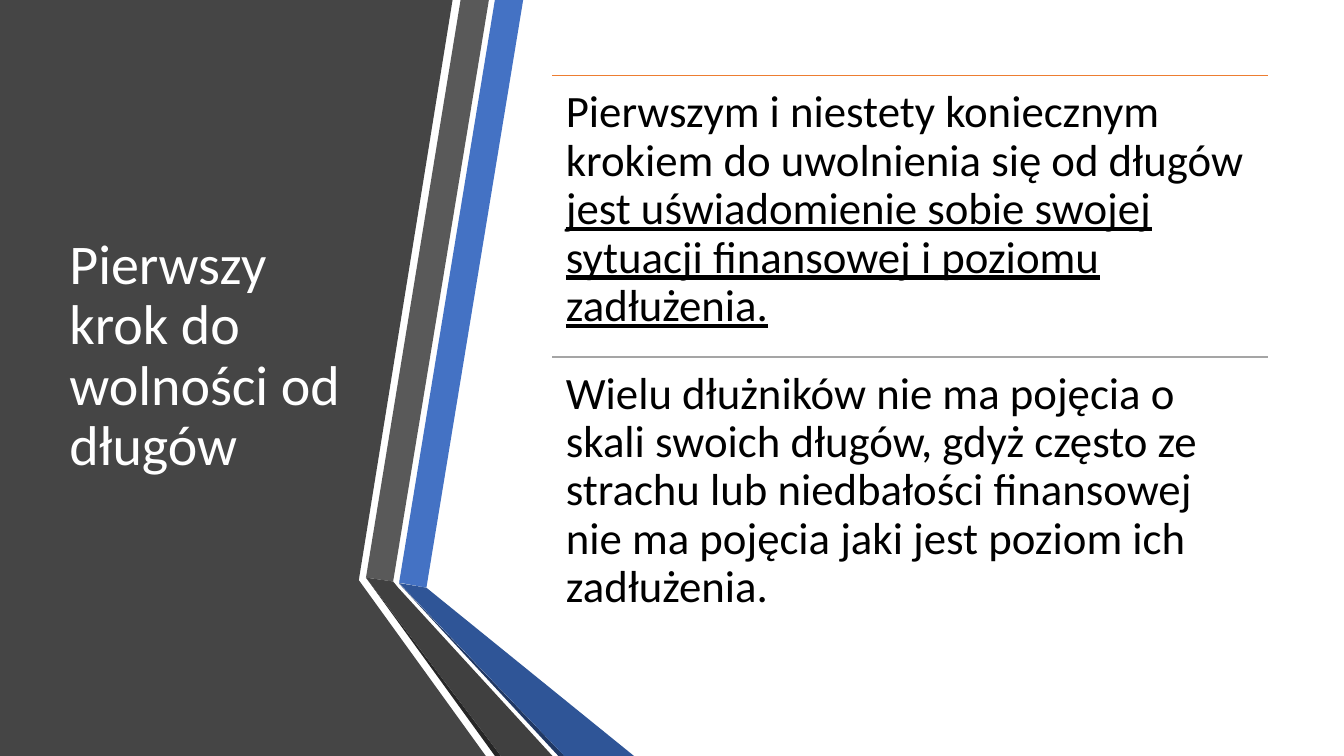
"""Build the slide on the first step to freedom from debt."""
from lxml import etree
from pptx import Presentation
from pptx import util as u
from pptx.dml.color import RGBColor
from pptx.enum import shapes, text
from pptx.oxml.ns import qn

TITLE = "Pierwszy krok do wolności od długów"
NOTES = [
    ("ED7D31", [
        ("Pierwszym i niestety koniecznym krokiem do uwolnienia się od długów ", False),
        ("jest uświadomienie sobie swojej sytuacji finansowej i poziomu zadłużenia.", True),
    ]),
    ("A5A5A5", [
        ("Wielu dłużników nie ma pojęcia o skali swoich długów, gdyż często ze strachu "
         "lub niedbałości finansowej nie ma pojęcia jaki jest poziom ich zadłużenia.", False),
    ]),
]

THEME = {"font": "Calibri", "title": 40, "body": 32, "light": "FFFFFF", "dark": "000000",
         "panel": "454545", "blue": "4472C4", "grey": "595959", "black": "262626",
         "navy": "203864", "deep": "2F5597", "coal": "404040"}

WIDE, HIGH = 960, 540
BANDS = [
    ("panel", [(0, 0), (323.3, 0), (256.3, 414.4), (347, HIGH), (0, HIGH)]),
    ("blue", [(285.1, 416.2), (304.6, 419.8), (373.7, 0), (353.5, 0)]),
    ("grey", [(349.2, 0), (329, 0), (261.4, 412.6), (280.8, 415.4)]),
    ("black", [(261.4, 412.6), (353.5, HIGH), (357.8, HIGH)]),
    ("navy", [(285.1, 416.9), (398.9, HIGH), (403.2, HIGH)]),
    ("deep", [(285.1, 416.5), (403.2, HIGH), (452.9, HIGH), (304.6, 419.8)]),
    ("coal", [(261.4, 412.6), (357.8, HIGH), (394.6, HIGH), (284.4, 419.8), (280.8, 415.4)]),
]
HEAD = (42.5, 54, 218.9, 401.8)
LEFT, TOP, SPAN, STEP = 394.6, 54, 511.2, 200.9


def tint(name):
    return RGBColor.from_string(THEME.get(name, name))


def band(slide, name, dots):
    pts = [(u.Pt(x), u.Pt(y)) for x, y in dots]
    path = slide.shapes.build_freeform(*pts[0], scale=1.0)
    path.add_line_segments(pts[1:], close=True)
    form = path.convert_to_shape()
    form.shadow.inherit = False
    form.fill.solid()
    form.fill.fore_color.rgb = tint(name)
    form.line.fill.background()


def rule(slide, top, color):
    line = slide.shapes.add_connector(
        shapes.MSO_CONNECTOR.STRAIGHT, *map(u.Pt, (LEFT, top, LEFT + SPAN, top)))
    line.line.color.rgb = tint(color)
    line.line.width = u.Pt(1)
    etree.SubElement(line._element.spPr, qn("a:effectLst"))


def write(slide, area, runs, size, color, pads, anchor):
    frame = slide.shapes.add_textbox(*map(u.Pt, area)).text_frame
    frame.word_wrap = True
    frame.vertical_anchor = anchor
    frame.margin_left = frame.margin_right = u.Pt(pads[0])
    frame.margin_top = frame.margin_bottom = u.Pt(pads[1])
    para = frame.paragraphs[0]
    para.line_spacing = 0.9
    for words, under in runs:
        run = para.add_run()
        run.text = words
        run.font.name = THEME["font"]
        run.font.size = u.Pt(THEME[size])
        run.font.color.rgb = tint(color)
        if under:
            run.font.underline = True


def main():
    deck = Presentation()
    deck.slide_width, deck.slide_height = u.Pt(WIDE), u.Pt(HIGH)
    slide = deck.slides.add_slide(deck.slide_layouts[6])
    for name, dots in BANDS:
        band(slide, name, dots)
    write(slide, HEAD, [(TITLE, False)], "title", "light", (7.2, 3.6), text.MSO_ANCHOR.MIDDLE)
    for i, (color, runs) in enumerate(NOTES):
        top = TOP + i * STEP
        rule(slide, top, color)
        write(slide, (LEFT, top, SPAN, STEP), runs, "body", "dark", (9.6, 9.6),
              text.MSO_ANCHOR.TOP)
    deck.save("out.pptx")


if __name__ == "__main__":
    main()
